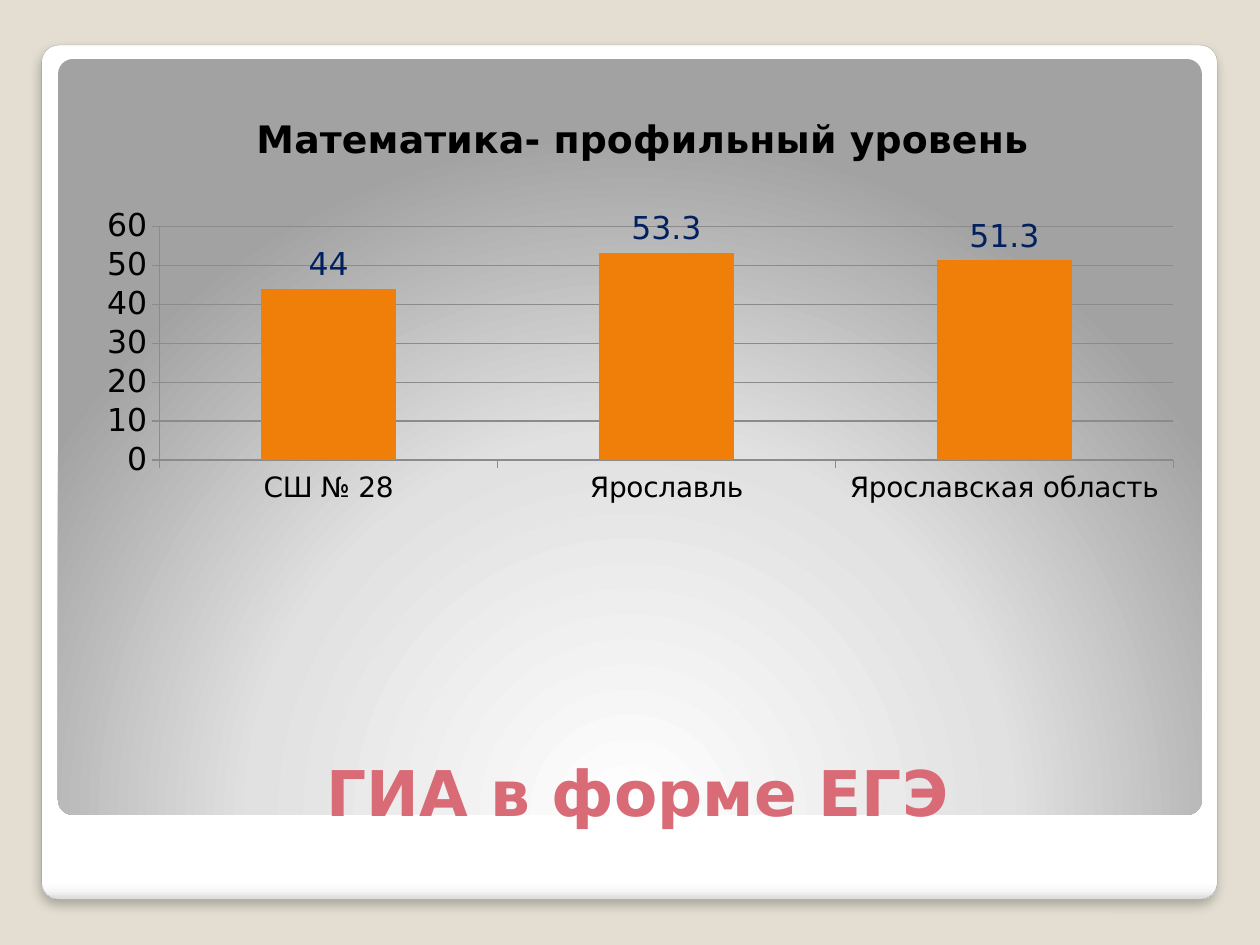
from lxml import etree
from pptx import Presentation
from pptx.chart import data as cd
from pptx.dml import color as dc
from pptx.enum import chart as ec, shapes, text
from pptx.oxml import ns, parse_xml
from pptx.util import Cm, Pt

FONT = "DejaVu Sans"


def rgb(code):
    return dc.RGBColor.from_string(code)


def style(font, size, code, bold=False):
    font.name, font.size, font.bold = FONT, Pt(size), bold
    font.color.rgb = rgb(code)


def blend(shape, stops, shade):
    marks = "".join(
        f'<a:gs pos="{pos * 1000}"><a:srgbClr val="{code}"/></a:gs>'
        for pos, code in stops)
    fill = parse_xml(
        f'<a:gradFill {ns.nsdecls("a")} rotWithShape="1">'
        f'<a:gsLst>{marks}</a:gsLst>{shade}</a:gradFill>')
    shape._element.spPr.find(ns.qn("a:prstGeom")).addnext(fill)


def panel(slide, box, stops, shade):
    shape = slide.shapes.add_shape(
        shapes.MSO_SHAPE.ROUNDED_RECTANGLE, *map(Cm, box))
    shape.adjustments[0] = 0.02
    shape.shadow.inherit = False
    shape.line.fill.background()
    blend(shape, stops, shade)
    return shape


def frame(slide, box):
    left, top, width, height = box
    card = panel(
        slide, box,
        [(0, "FFFFFF"), (98, "FFFFFF"), (99, "F7F7F7"), (100, "DADADA")],
        '<a:lin ang="5400000" scaled="0"/>')
    card.line.color.rgb = rgb("A4A4A4")
    card.line.width = Pt(0.16)
    glow = card._element.spPr.find(ns.qn("a:effectLst"))
    glow.append(parse_xml(
        f'<a:outerShdw {ns.nsdecls("a")} blurRad="{Pt(6)}" dist="{Pt(4)}" '
        'dir="5400000" algn="t" rotWithShape="0"><a:srgbClr val="000000">'
        '<a:alpha val="25000"/></a:srgbClr></a:outerShdw>'))
    panel(
        slide, (left + 0.33, top + 0.28, width - 0.64, height - 1.98),
        [(0, "FFFFFF"), (55, "E1E1E1"), (100, "A2A2A2")],
        '<a:path path="circle"><a:fillToRect l="50000" t="175000" '
        'r="50000" b="-75000"/></a:path>')


def head(slide, box, words):
    area = slide.shapes.add_textbox(*map(Cm, box)).text_frame
    area.word_wrap = True
    area.margin_top = area.margin_bottom = 0
    area.vertical_anchor = text.MSO_ANCHOR.BOTTOM
    area.text = words
    line = area.paragraphs[0]
    line.alignment = text.PP_ALIGN.CENTER
    style(line.runs[0].font, 36, "D96B77", True)


def place(owner, **parts):
    for old in owner.findall(ns.qn("c:layout")):
        owner.remove(old)
    layout = etree.Element(ns.qn("c:layout"))
    manual = etree.SubElement(layout, ns.qn("c:manualLayout"))
    for tag, val in parts.items():
        etree.SubElement(manual, ns.qn(f"c:{tag}")).set("val", str(val))
    return layout


def graph(slide, box, words):
    data = cd.CategoryChartData()
    data.categories = ["СШ № 28", "Ярославль", "Ярославская область"]
    data.add_series("Series 1", [44, 53.3, 51.3])
    chart = slide.shapes.add_chart(
        ec.XL_CHART_TYPE.COLUMN_CLUSTERED, *map(Cm, box), data).chart
    style(chart.font, 18, "000000")
    chart.has_legend = False

    chart.has_title = True
    title = chart.chart_title
    title.text_frame.text = words
    style(title.text_frame.paragraphs[0].runs[0].font, 21.6, "000000", True)
    title.include_in_layout = False
    node = title._element
    spot = place(node, xMode="edge", yMode="edge", x=0.16, y=0.05)
    node.find(ns.qn("c:tx")).addnext(spot)

    area = chart._chartSpace.chart.plotArea
    area.insert(0, place(
        area, layoutTarget="inner", xMode="edge", yMode="edge",
        x=0.08, y=0.23, w=0.9, h=0.35))

    plot = chart.plots[0]
    plot.gap_width = 150
    plot.vary_by_categories = False
    bars = plot.series[0]
    bars.format.fill.solid()
    bars.format.fill.fore_color.rgb = rgb("F07F09")
    tags = bars.data_labels
    tags.show_value = True
    tags.position = ec.XL_LABEL_POSITION.OUTSIDE_END
    style(tags.font, 18, "002060")

    base, scale = chart.category_axis, chart.value_axis
    for axis, size in ((base, 16), (scale, 18)):
        style(axis.tick_labels.font, size, "000000")
        axis.major_tick_mark = ec.XL_TICK_MARK.OUTSIDE
        axis.format.line.color.rgb = rgb("8B8B8B")
    scale.minimum_scale, scale.maximum_scale, scale.major_unit = 0, 60, 10
    scale.has_major_gridlines = True
    scale.major_gridlines.format.line.color.rgb = rgb("8B8B8B")


def main():
    deck = Presentation()
    deck.slide_width, deck.slide_height = Cm(25.4), Cm(19.05)
    slide = deck.slides.add_slide(deck.slide_layouts[6])
    slide.background.fill.solid()
    slide.background.fill.fore_color.rgb = rgb("E3DED1")
    frame(slide, (0.84, 0.91, 23.7, 17.22))
    head(slide, (1.4, 14.33, 22.91, 2.39), "ГИА в форме ЕГЭ")
    graph(slide, (1.4, 1.47, 22.71, 13.46), "Математика- профильный уровень")
    deck.save("out.pptx")


if __name__ == "__main__":
    main()
